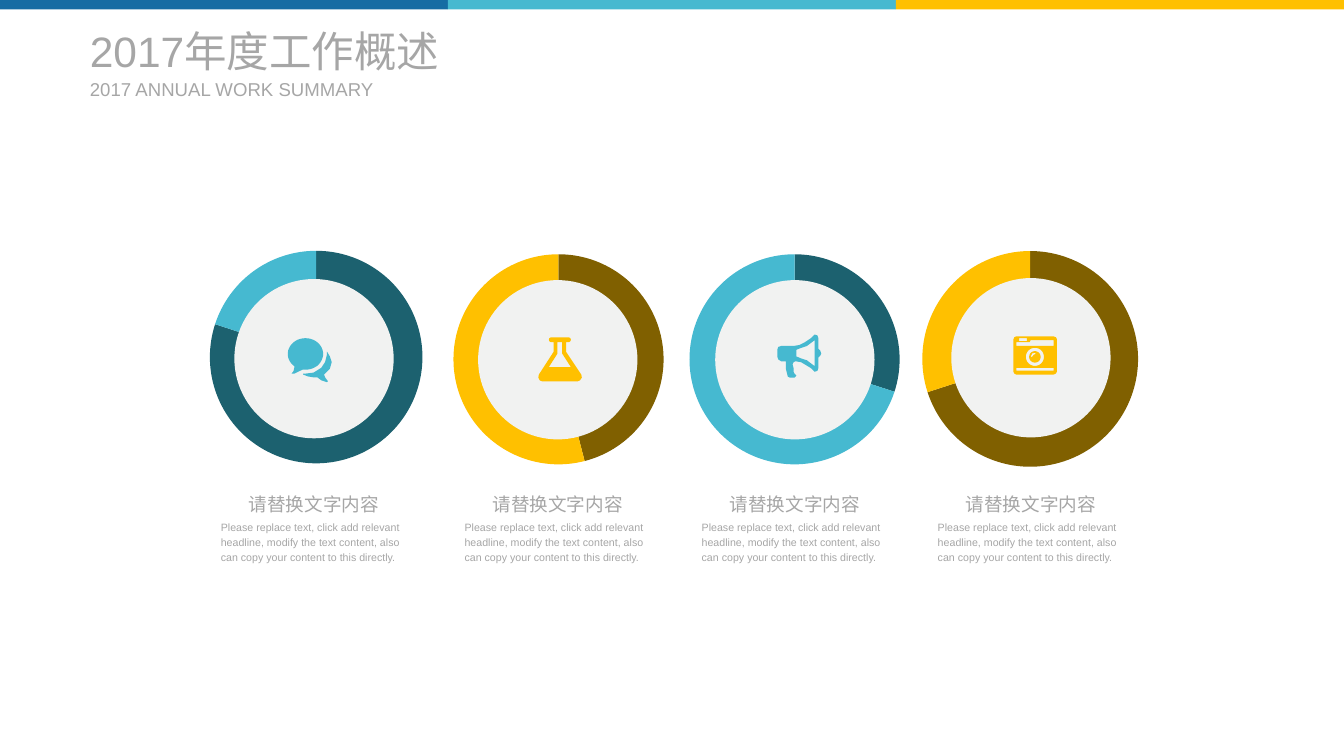
from math import cos, radians, sin

from lxml.etree import SubElement
from pptx import Presentation
from pptx.chart.data import CategoryChartData
from pptx.dml.color import RGBColor
from pptx.enum.chart import XL_CHART_TYPE as CHART
from pptx.enum.shapes import MSO_SHAPE as SHAPE
from pptx.enum.text import MSO_ANCHOR as ANCHOR, MSO_AUTO_SIZE as FIT, PP_ALIGN as ALIGN
from pptx.oxml.ns import qn
from pptx.util import Pt

WIDTH, HEIGHT = 1012.32, 569.52
BLUE, CYAN, YELLOW = "166CA3", "46B9D0", "FFC000"
TEAL, BROWN, GREY, PALE = "1C616F", "806000", "A6A6A6", "F1F2F1"
HEADING = "请替换文字内容"
DETAIL = ("Please replace text, click add relevant headline, modify the text content, "
          "also can copy your content to this directly.")
PLOT = {"xMode": "edge", "yMode": "edge", "x": 0.075, "y": 0.001, "w": 0.852, "h": 1.0}


def color(value):
    """Turn a hex string into a colour."""
    return RGBColor.from_string(value)


def assign(target, formats):
    """Set each attribute named in a dict."""
    for name, value in formats.items():
        setattr(target, name, value)


def place(sp, left, top, width, height):
    """Move and size a shape, in points."""
    assign(sp, {"left": Pt(left), "top": Pt(top), "width": Pt(width), "height": Pt(height)})


def paint(sp, fill):
    """Give a shape a flat fill with no outline or shadow."""
    sp.shadow.inherit = False
    sp.fill.solid()
    sp.fill.fore_color.rgb = color(fill)
    sp.line.fill.background()


def write(sp, text, size, anchor=ANCHOR.MIDDLE, **paragraph):
    """Write one grey paragraph in a shape without margins."""
    tf = sp.text_frame
    assign(tf, {"word_wrap": True, "auto_size": FIT.NONE, "vertical_anchor": anchor,
                "margin_left": 0, "margin_top": 0, "margin_right": 0, "margin_bottom": 0})
    p = tf.paragraphs[0]
    assign(p, {"alignment": ALIGN.LEFT, "space_before": Pt(0), **paragraph})
    r = p.add_run()
    r.text = text
    assign(r.font, {"name": "Arial", "size": Pt(size), "bold": False})
    r.font.color.rgb = color(GREY)


def arc(cx, cy, rx, ry, start=0, sweep=360):
    """List points along an elliptical arc."""
    angles = [radians(start + sweep * i / 40) for i in range(41)]
    return [(cx + rx * cos(a), cy + ry * sin(a)) for a in angles]


CHAT = [
    arc(18.5, 16.5, 18.5, 16.5, 128, 330) + [(11, 35), (7, 37), (4, 37), (6, 34.5)],
    [(46, 25), (44, 32), (38, 38), (39, 41), (42, 45), (41, 46), (35, 44), (31, 41), (27, 41),
     (21, 40), (16, 38), (16, 37), (19, 37), (27, 36), (35, 31), (39, 25), (41, 17), (41, 14),
     (44, 19)],
]
FLASK = [
    [(45, 39), (45.5, 42), (43.5, 45), (41, 46), (4, 46), (1.5, 45), (0, 42), (0.5, 39),
     (16, 15), (16, 5), (13, 5), (11.5, 4), (11, 2.5), (11.5, 0.8), (13, 0), (32, 0),
     (33.5, 0.8), (34, 2.5), (33.5, 4), (32, 5), (29, 5), (29, 15)],
    [(11, 31), (34, 31), (25, 17), (25, 5), (20, 5), (20, 17)],
]
HORN = [
    [(46, 20), (45, 22), (43, 24), (43, 35), (42, 38), (39, 39), (35, 35), (30, 32), (25, 29),
     (19, 28), (17, 29), (16, 31), (17, 35), (17, 39), (18, 41), (20, 43), (18, 45), (13, 45),
     (11, 44), (10, 40), (9, 36), (9, 28), (4, 28), (1, 26), (0, 23), (0, 16), (1, 13), (4, 12),
     (17, 12), (23, 11), (29, 8), (35, 4), (39, 0), (42, 1), (43, 4), (43, 15), (45, 17)],
    [(39, 6), (35, 9), (31, 12), (25, 14), (20, 16), (20, 23), (25, 25), (31, 27), (35, 30),
     (39, 33)],
]
CAMERA = [
    [(42, 0), (44.5, 1), (45.5, 3), (45.5, 37), (44.5, 39), (42, 40), (3, 40), (1, 39),
     (0, 37), (0, 3), (1, 1), (3, 0)],
    [(42, 4), (18, 4), (17, 6), (3, 6), (3, 10), (42, 10)],
    [(42, 33), (3, 33), (3, 36), (42, 36)],
    [(6, 5), (14, 5), (14, 2), (6, 2)],
    arc(22.5, 21.5, 9.5, 9.5),
    arc(22.5, 21.5, 6, 6),
    [(20, 21), (21, 19.5), (22.5, 18.7), (23.5, 18), (22.5, 17.2), (19.5, 18), (18.3, 21),
     (19, 22)],
]
CARDS = [
    (166.3, 210.2, (144, 175, 188), (80, 20), (TEAL, CYAN), CHAT, (40.3, 44.6)),
    (349.9, 211, (327.6, 177.8, 185.8), (46, 54), (BROWN, YELLOW), FLASK, (45.4, 43.2)),
    (528.5, 211, (505.4, 177.8, 185.8), (30, 70), (TEAL, CYAN), HORN, (46.8, 41)),
    (706.3, 209.5, (680.4, 175, 190.8), (70, 30), (BROWN, YELLOW), CAMERA, (46.8, 43.9)),
]


def add_icon(s, left, top, contours, fill):
    """Draw an icon given in hundredths of an inch from its corner."""
    fb = None
    for contour in contours:
        points = [(x * 10, y * 10) for x, y in contour]
        if fb is None:
            fb = s.shapes.build_freeform(*points[0], scale=Pt(0.072))
        else:
            fb.move_to(*points[0])
        fb.add_line_segments(points[1:], close=True)
    paint(fb.convert_to_shape(Pt(left), Pt(top)), fill)


def add_ring(s, left, top, size, values, fills):
    """Add a two-slice pie in a square box."""
    data = CategoryChartData()
    data.categories = ["1", "2"]
    data.add_series("Series 1", values)
    chart = s.shapes.add_chart(CHART.PIE, Pt(left), Pt(top), Pt(size), Pt(size), data).chart
    assign(chart, {"has_legend": False, "has_title": False})
    assign(chart.font, {"name": "Arial", "size": Pt(30)})
    chart.font.color.rgb = color("000000")
    plot = chart.plots[0]
    plot.vary_by_categories = True
    for i, fill in enumerate(fills):
        look = plot.series[0].points[i].format
        look.fill.solid()
        look.fill.fore_color.rgb = color(fill)
        look.line.fill.background()
    area = chart.element.find(".//" + qn("c:plotArea"))
    for old in area.findall(qn("c:layout")):
        area.remove(old)
    layout = SubElement(area, qn("c:layout"))
    area.insert(0, layout)
    manual = SubElement(layout, qn("c:manualLayout"))
    for name, value in {"layoutTarget": "inner", **PLOT}.items():
        SubElement(manual, qn("c:" + name)).set("val", str(value))


def add_card(s, left, hub_top, ring, values, fills, icon, offset):
    """Add a ring with its hub, icon and text in a column."""
    width, hub = 140.4, 120
    hub_left = left + (width - hub) / 2
    add_ring(s, *ring, values, fills)
    sp = s.shapes.add_shape(SHAPE.OVAL, Pt(hub_left), Pt(hub_top), Pt(hub), Pt(hub))
    paint(sp, PALE)
    add_icon(s, hub_left + offset[0], hub_top + offset[1], icon, fills[1])
    heading = s.shapes.add_textbox(Pt(left), Pt(370.8), Pt(width), Pt(17.3))
    write(heading, HEADING, 14, alignment=ALIGN.CENTER)
    detail = s.shapes.add_textbox(Pt(left), Pt(390.2), Pt(width), Pt(33.8))
    write(detail, DETAIL, 8, ANCHOR.TOP, line_spacing=1.2, space_before=Pt(8))


def add_header(s, left, top):
    """Fill the title and the subtitle below it."""
    title, body = s.shapes.title, s.placeholders[1]
    place(title, left, top, 311, 38.9)
    write(title, "2017年度工作概述", 32)
    place(body, left, top + 39.6, 221, 17.3)
    write(body, "2017 ANNUAL WORK SUMMARY", 14)


def add_stripe(s, left, top, width, height):
    """Split a band into three equal coloured parts."""
    part = width / 3
    for i, fill in enumerate((BLUE, CYAN, YELLOW)):
        sp = s.shapes.add_shape(SHAPE.RECTANGLE, Pt(left + i * part), Pt(top),
                                Pt(part), Pt(height))
        paint(sp, fill)


def main():
    """Build and save the slide."""
    prs = Presentation()
    assign(prs, {"slide_width": Pt(WIDTH), "slide_height": Pt(HEIGHT)})
    s = prs.slides.add_slide(prs.slide_layouts[2])
    for sp in list(s.placeholders):
        if sp.placeholder_format.idx > 1:
            sp.element.getparent().remove(sp.element)
    add_header(s, 67.7, 18.7)
    for card in CARDS:
        add_card(s, *card)
    add_stripe(s, 0, 0, WIDTH, 7.2)
    prs.save("out.pptx")


if __name__ == "__main__":
    main()
